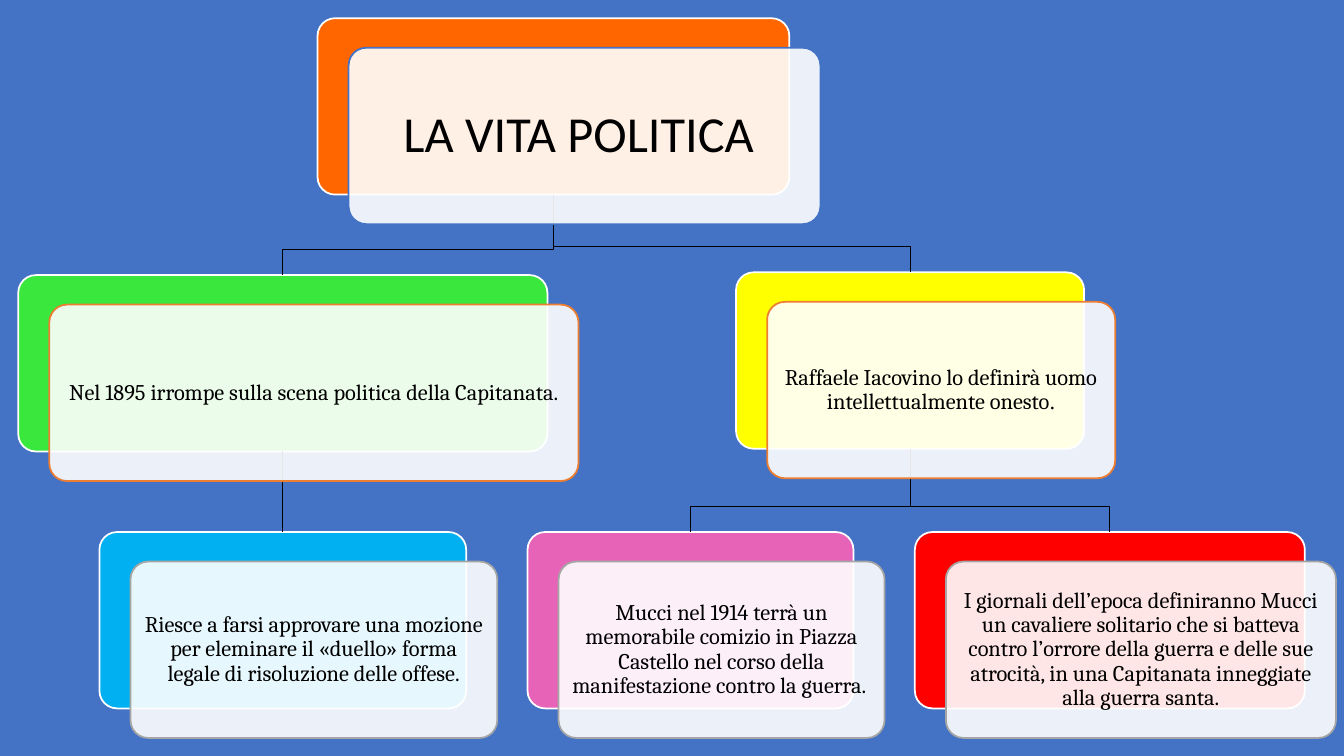
"""Build a slide with a tree of layered cards on Mucci's political life."""
import pptx
import pptx.dml.color
import pptx.enum.shapes
import pptx.enum.text
import pptx.oxml
import pptx.util
from lxml import etree
from pptx.oxml.ns import qn

Pt = pptx.util.Pt

TITLE = "LA VITA POLITICA "
CARDS = {
    "root": (226.8, 13, 337, "FF6600", "4472C4", []),
    "scene": (13, 196.5, 378, "39E73D", "ED7D31", [
        ("Nel 1895 irrompe sulla scena politica della Capitanata.", "Cambria")]),
    "duel": (71, 380, 262, "00B0F0", "A5A5A5", [
        ("Riesce a farsi approvare una mozione per eleminare il «duello» forma "
         "legale di risoluzione delle offese.", "Cambria")]),
    "honest": (525.8, 194.5, 248.6, "FFFF00", "ED7D31", [
        ("Raffaele Iacovino lo definirà uomo intellettualmente onesto", "Cambria"),
        (".", "Times New Roman")]),
    "rally": (376.8, 380, 232.8, "E763B8", "A5A5A5", [
        ("Mucci nel 1914 terrà un memorabile comizio in Piazza Castello nel corso "
         "della manifestazione contro la guerra. ", "Cambria")]),
    "knight": (653.5, 380, 278.6, "FF0000", "A5A5A5", [
        ("I giornali dell’epoca definiranno Mucci un cavaliere solitario che si "
         "batteva contro l’orrore della guerra e delle sue atrocità, in una "
         "Capitanata inneggiate alla guerra santa.", "Cambria")]),
}
LINKS = [("honest", "knight"), ("honest", "rally"), ("root", "honest"),
         ("scene", "duel"), ("root", "scene")]
CARD_HEIGHT = 126
SHIFT_X, SHIFT_Y = 22.2, 21.1
BEND = 18.4
INSET, TITLE_INSET = 5, 14.4


def color(value):
    return pptx.dml.color.RGBColor.from_string(value)


def add_card(page, left, top, width, fill, line, opacity=100):
    card = page.shapes.add_shape(
        pptx.enum.shapes.MSO_SHAPE.ROUNDED_RECTANGLE,
        Pt(left), Pt(top), Pt(width), Pt(CARD_HEIGHT))
    card.adjustments[0] = 0.1
    card.shadow.inherit = False
    card.fill.solid()
    card.fill.fore_color.rgb = color(fill)
    card.line.color.rgb = color(line)
    card.line.width = Pt(1.25)
    if opacity < 100:
        tint = card.element.spPr.find(qn("a:solidFill")).find(qn("a:srgbClr"))
        etree.SubElement(tint, qn("a:alpha")).set("val", str(opacity * 1000))
    return card


def add_link(page, parent, child):
    start_x = parent.left + parent.width // 2
    start_y = parent.top + parent.height
    end_x, end_y = child.left + child.width // 2, child.top
    if start_x == end_x:
        link = page.shapes.add_connector(
            pptx.enum.shapes.MSO_CONNECTOR.STRAIGHT, start_x, start_y, end_x, end_y)
        link.begin_connect(parent, 2)
        link.end_connect(child, 0)
        etree.SubElement(link.element.spPr, qn("a:effectLst"))
    else:
        bend_y = end_y - Pt(BEND)
        outline = page.shapes.build_freeform(start_x, start_y)
        outline.add_line_segments(
            [(start_x, bend_y), (end_x, bend_y), (end_x, end_y)], close=False)
        link = outline.convert_to_shape()
        link.shadow.inherit = False
        link.fill.background()
    link.line.color.rgb = color("000000")
    link.line.width = Pt(0.75)


def write(box, spans, size, inset):
    frame = box.text_frame
    frame.word_wrap = True
    frame.auto_size = pptx.enum.text.MSO_AUTO_SIZE.NONE
    frame.vertical_anchor = pptx.enum.text.MSO_ANCHOR.MIDDLE
    frame.margin_left = frame.margin_right = Pt(inset)
    frame.margin_top = frame.margin_bottom = Pt(inset)
    para = frame.paragraphs[0]
    para.alignment = pptx.enum.text.PP_ALIGN.CENTER
    para.line_spacing = 0.9
    para.font.size = Pt(size)
    para.font.color.rgb = color("000000")
    for text, font in spans:
        span = para.add_run()
        span.text = text
        span.font.name = font


def main():
    deck = pptx.Presentation()
    deck.slide_width, deck.slide_height = Pt(960), Pt(540)
    page = deck.slides.add_slide(deck.slide_layouts[5])
    page.background.fill.solid()
    page.background.fill.fore_color.rgb = color("4472C4")

    backs = {name: add_card(page, left, top, width, fill, "FFFFFF")
             for name, (left, top, width, fill, _, _) in CARDS.items()}
    for parent, child in LINKS:
        add_link(page, backs[parent], backs[child])
    fronts = {}
    for name, (left, top, width, _, line, spans) in CARDS.items():
        fronts[name] = add_card(
            page, left + SHIFT_X, top + SHIFT_Y, width, "FFFFFF", line, 90)
        if spans:
            write(fronts[name], spans, 16, INSET)

    title, panel = page.shapes.title, fronts["root"]
    title.left, title.top = panel.left, panel.top
    title.width, title.height = panel.width, panel.height
    write(title, [(TITLE, "Calibri")], 36, TITLE_INSET)
    panel.element.addnext(title.element)
    deck.save("out.pptx")


if __name__ == "__main__":
    main()
